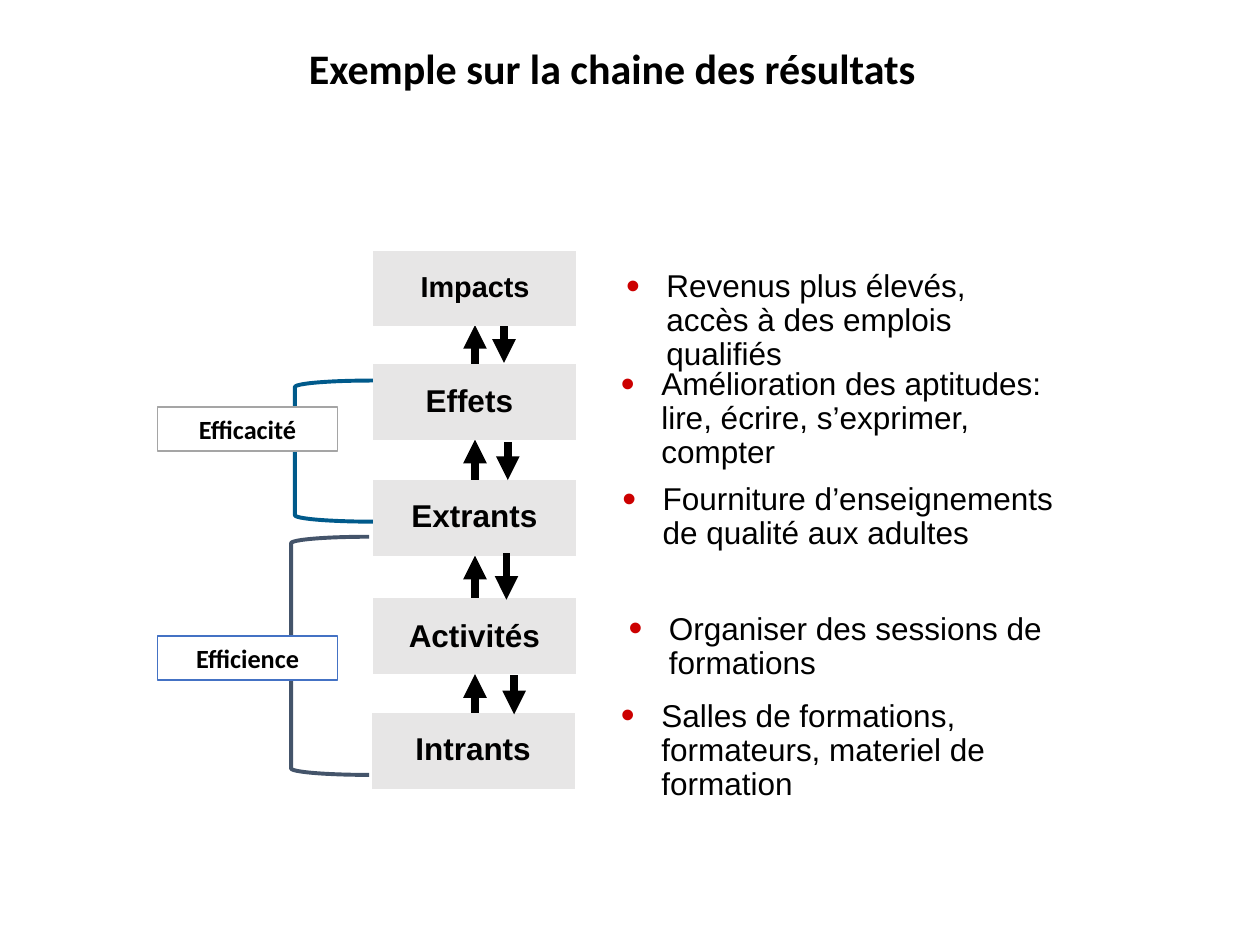
from lxml import etree
from pptx import Presentation
from pptx.dml.color import RGBColor
from pptx.enum.shapes import MSO_CONNECTOR, MSO_SHAPE
from pptx.enum.text import MSO_ANCHOR, MSO_AUTO_SIZE, PP_ALIGN
from pptx.oxml.ns import qn
from pptx.util import Inches, Pt

BLACK = RGBColor(0x00, 0x00, 0x00)
WHITE = RGBColor(0xFF, 0xFF, 0xFF)
LEVEL_GREY = RGBColor(0xE7, 0xE6, 0xE6)
BULLET_RED = RGBColor(0xCC, 0x00, 0x00)
EFFICACY_BLUE = RGBColor(0x00, 0x5A, 0x8B)
EFFICIENCY_SLATE = RGBColor(0x44, 0x54, 0x6A)
LABEL_GREY = RGBColor(0xA5, 0xA5, 0xA5)
LABEL_BLUE = RGBColor(0x44, 0x72, 0xC4)

LEVEL_W, LEVEL_H = 1.61, 0.6

# Level: name, size, box (left, top), name (left, top, width, height),
# example, example (left, top, width, height)
LEVELS = [
    ("Impacts", 16.5, (2.96, 1.99), (3.23, 2.11, 1.08, 0.35),
     "Revenus plus élevés, accès à des emplois qualifiés",
     (4.87, 2.09, 3.49, 0.92)),
    ("Effets", 18, (2.96, 2.89), (3.24, 3.01, 0.97, 0.37),
     "Amélioration des aptitudes: lire, écrire, s’exprimer, compter",
     (4.83, 2.87, 3.91, 0.92)),
    ("Extrants", 18, (2.96, 3.81), (3.16, 3.92, 1.21, 0.37),
     "Fourniture d’enseignements de qualité aux adultes",
     (4.84, 3.78, 3.91, 0.65)),
    ("Activités", 18, (2.96, 4.75), (3.14, 4.87, 1.25, 0.37),
     "Organiser des sessions de formations",
     (4.89, 4.81, 3.67, 0.65)),
    ("Intrants", 18, (2.95, 5.66), (3.19, 5.77, 1.13, 0.37),
     "Salles de formations, formateurs, materiel de formation",
     (4.83, 5.5, 3.49, 0.92)),
]

# Arrows: x, start y, end y
UP_ARROWS = [(3.77, 5.99, 5.35), (3.77, 5.06, 4.41),
             (3.77, 4.13, 3.49), (3.77, 3.23, 2.58)]
DOWN_ARROWS = [(4, 2.59, 2.88), (4.03, 3.51, 3.81),
               (4.02, 4.39, 4.76), (4.08, 5.36, 5.67)]

# Criterion: name, bracket place, bracket colour, label top, label outline
CRITERIA = [
    ("Efficacité", (2.34, 3.02, 0.62, 1.12), EFFICACY_BLUE, 3.23, LABEL_GREY),
    ("Efficience", (2.31, 4.26, 0.62, 1.89), EFFICIENCY_SLATE, 5.05, LABEL_BLUE),
]


def inches(place):
    return [Inches(value) for value in place]


def write(frame, text, size, font, bold=True, align=PP_ALIGN.CENTER, spacing=None):
    frame.vertical_anchor = MSO_ANCHOR.MIDDLE
    paragraph = frame.paragraphs[0]
    paragraph.alignment = align
    paragraph.line_spacing = spacing
    run = paragraph.add_run()
    run.text = text
    run.font.size = Pt(size)
    run.font.name = font
    run.font.bold = bold
    run.font.color.rgb = BLACK
    return paragraph


def add_text(shapes, place, text, size, font, wrap=True, **style):
    frame = shapes.add_textbox(*inches(place)).text_frame
    frame.word_wrap = wrap
    paragraph = write(frame, text, size, font, spacing=0.9, **style)
    return frame, paragraph


def add_bullet(paragraph):
    properties = paragraph._p.get_or_add_pPr()
    properties.set("marL", str(Inches(0.32)))
    properties.set("indent", str(-Inches(0.32)))
    colour = etree.SubElement(properties, qn("a:buClr"))
    etree.SubElement(colour, qn("a:srgbClr"), val=str(BULLET_RED))
    etree.SubElement(properties, qn("a:buSzPct"), val="125000")
    etree.SubElement(properties, qn("a:buFont"), typeface="Arial")
    etree.SubElement(properties, qn("a:buChar"), char="•")


def add_box(shapes, kind, place, fill=None, outline=None, width=1):
    box = shapes.add_shape(kind, *inches(place))
    box.shadow.inherit = False
    if fill is None:
        box.fill.background()
    else:
        box.fill.solid()
        box.fill.fore_color.rgb = fill
    if outline is None:
        box.line.fill.background()
    else:
        box.line.color.rgb = outline
        box.line.width = Pt(width)
    return box


def add_arrow(shapes, x, start, end):
    arrow = shapes.add_connector(MSO_CONNECTOR.STRAIGHT, *inches((x, start, x, end)))
    arrow.line.color.rgb = BLACK
    arrow.line.width = Pt(4.5)
    etree.SubElement(arrow.line._get_or_add_ln(), qn("a:tailEnd"), type="triangle")
    etree.SubElement(arrow._element.spPr, qn("a:effectLst"))


def add_level(shapes, name, size, corner, name_place, example, example_place):
    level = shapes.add_group_shape().shapes
    add_box(level, MSO_SHAPE.ACTION_BUTTON_CUSTOM,
            (*corner, LEVEL_W, LEVEL_H), LEVEL_GREY)
    name_frame, _ = add_text(level, name_place, name, size, "Arial", wrap=False)
    example_frame, paragraph = add_text(level, example_place, example, 18, "Arial",
                                        bold=False, align=PP_ALIGN.LEFT)
    add_bullet(paragraph)
    for frame in (name_frame, example_frame):
        frame.auto_size = MSO_AUTO_SIZE.SHAPE_TO_FIT_TEXT


def main():
    prs = Presentation()
    prs.slide_width, prs.slide_height = Inches(10), Inches(7.5)
    shapes = prs.slides.add_slide(prs.slide_layouts[6]).shapes

    # Title
    add_text(shapes, (0.97, 0.31, 7.78, 0.51),
             "Exemple sur la chaine des résultats", 24, "Calibri")

    # Results chain, with the upward arrows behind the levels
    for arrow in UP_ARROWS:
        add_arrow(shapes, *arrow)
    for level in LEVELS:
        add_level(shapes, *level)
    for arrow in DOWN_ARROWS:
        add_arrow(shapes, *arrow)

    # Brackets, then the criteria labels over them
    for _, place, colour, _, _ in CRITERIA:
        add_box(shapes, MSO_SHAPE.LEFT_BRACKET, place, outline=colour, width=2.25)
    for name, _, _, top, outline in CRITERIA:
        label = add_box(shapes, MSO_SHAPE.RECTANGLE, (1.25, top, 1.43, 0.35),
                        WHITE, outline)
        write(label.text_frame, name, 15, "Calibri")

    prs.save("out.pptx")


if __name__ == "__main__":
    main()
